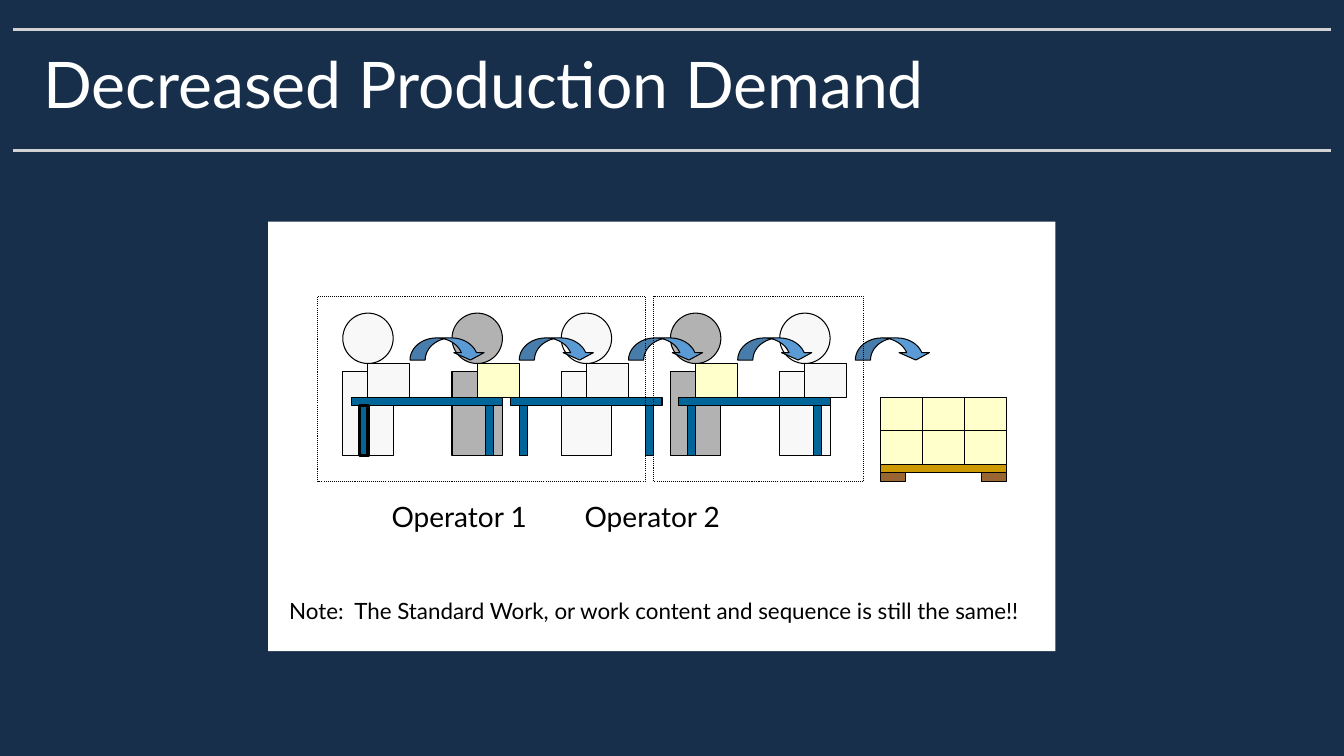
from lxml.etree import SubElement
from pptx import Presentation
from pptx.dml.color import RGBColor
from pptx.enum.dml import MSO_LINE
from pptx.enum.shapes import MSO_CONNECTOR, MSO_SHAPE as Shape
from pptx.enum.text import MSO_ANCHOR, MSO_AUTO_SIZE, PP_ALIGN
from pptx.oxml.ns import qn
from pptx.util import Inches, Pt

NAVY = RGBColor(0x17, 0x2F, 0x4A)
SILVER = RGBColor(0xD1, 0xD2, 0xD4)
WHITE = RGBColor(0xFF, 0xFF, 0xFF)
BLACK = RGBColor(0x00, 0x00, 0x00)
PALE = RGBColor(0xF8, 0xF8, 0xF8)
GRAY = RGBColor(0xB2, 0xB2, 0xB2)
CREAM = RGBColor(0xFF, 0xFF, 0xCC)
GOLD = RGBColor(0xCC, 0x99, 0x00)
BROWN = RGBColor(0x99, 0x66, 0x33)
TEAL = RGBColor(0x00, 0x66, 0x99)
BLUE = RGBColor(0x5B, 0x9B, 0xD5)

TITLE_ONLY = 5
STATION_PITCH = 13
BOX_WIDTH, BOX_HEIGHT = 5, 4
TABLE_ROW = 12


class Board:
    font_name = "Lato"
    cell = Inches(1) / 12
    grid_left, grid_top = Inches(3.15), Inches(2.94)

    def __init__(self, deck):
        self.width, self.height = deck.slide_width, deck.slide_height
        self.page = deck.slides.add_slide(deck.slide_layouts[TITLE_ONLY])
        background = self.page.background.fill
        background.solid()
        background.fore_color.rgb = NAVY

    def share(self, left, top, width, height):
        """Turn percentages of the slide into lengths."""
        return [round(part * side / 100) for part, side in
                zip((left, top, width, height), (self.width, self.height) * 2)]

    def grid(self, column, row, columns, rows):
        """Turn cells of the workstation grid into lengths."""
        return [round(self.grid_left + column * self.cell),
                round(self.grid_top + row * self.cell),
                round(columns * self.cell), round(rows * self.cell)]

    def shape(self, kind, area, fill=None, weight=0.75, dash=None):
        shape = self.page.shapes.add_shape(kind, *area)
        shape.shadow.inherit = False
        if fill is None:
            shape.fill.background()
        else:
            shape.fill.solid()
            shape.fill.fore_color.rgb = fill
        if weight:
            shape.line.color.rgb = BLACK
            shape.line.width = Pt(weight)
            shape.line.dash_style = dash
        else:
            shape.line.fill.background()
        return shape

    def block(self, column, row, columns, rows, fill=None, **style):
        return self.shape(Shape.RECTANGLE, self.grid(column, row, columns, rows), fill, **style)

    def rule(self, level):
        left, top, right, bottom = self.share(0.98, level, 99, level)
        line = self.page.shapes.add_connector(MSO_CONNECTOR.STRAIGHT, left, top, right, bottom)
        line.line.color.rgb = SILVER
        line.line.width = Pt(2)
        SubElement(line._element.spPr, qn("a:effectLst"))

    def span(self, para, text, size, color):
        span = para.add_run()
        span.text = text
        span.font.color.rgb = color
        for name, value in {"name": self.font_name, "size": Pt(size)}.items():
            setattr(span.font, name, value)

    def title(self, text):
        title = self.page.shapes.title
        title.left, title.top, title.width, title.height = self.share(2.48, 6.53, 94.95, 10.67)
        frame_format = {"word_wrap": True, "auto_size": MSO_AUTO_SIZE.NONE,
                        "vertical_anchor": MSO_ANCHOR.MIDDLE}
        for name, value in frame_format.items():
            setattr(title.text_frame, name, value)
        para = title.text_frame.paragraphs[0]
        para_format = {"alignment": PP_ALIGN.LEFT, "line_spacing": 0.82, "space_after": Pt(9)}
        for name, value in para_format.items():
            setattr(para, name, value)
        self.span(para, text, 45.9, WHITE)

    def label(self, area, spans, tabs=()):
        """Add one line of (text, size) spans, with tab stops in inches."""
        box = self.page.shapes.add_textbox(*area)
        box.text_frame.word_wrap = False
        box.text_frame.auto_size = MSO_AUTO_SIZE.SHAPE_TO_FIT_TEXT
        para = box.text_frame.paragraphs[0]
        if tabs:
            stops = SubElement(para._p.get_or_add_pPr(), qn("a:tabLst"))
            for tab in tabs:
                SubElement(stops, qn("a:tab"), pos=str(Inches(tab)), algn="l")
        for text, size in spans:
            self.span(para, text, size, BLACK)

    def person(self, column, body_color, box_color):
        self.block(column, 9, 6, 10, body_color)
        self.shape(Shape.OVAL, self.grid(column, 2, 6, 6), body_color)
        self.block(column + 3, TABLE_ROW - BOX_HEIGHT, BOX_WIDTH, BOX_HEIGHT, box_color)

    def pallet(self, column):
        self.block(column, 20, 3 * BOX_WIDTH, 1, GOLD)
        for level in (1, 2):
            for place in range(3):
                self.block(column + place * BOX_WIDTH, 20 - level * BOX_HEIGHT,
                           BOX_WIDTH, BOX_HEIGHT, CREAM)
        for offset in (0, 12):
            self.block(column + offset, 21, 3, 1, BROWN)

    def transfer(self, column):
        arrow = self.shape(Shape.CURVED_DOWN_ARROW, self.grid(column, 4.95, 9, 2.63), BLUE)
        for index, value in enumerate((0.686, 1.371, 0.333)):
            arrow.adjustments[index] = value

    def table(self, column, first_leg_weight=0.75):
        self.block(column, TABLE_ROW, 18, 1, TEAL)
        for offset, weight in ((1, first_leg_weight), (16, 0.75)):
            self.block(column + offset, TABLE_ROW + 1, 1, 6, TEAL, weight=weight)


def main():
    deck = Presentation()
    deck.slide_width, deck.slide_height = Inches(13.33), Inches(7.5)
    board = Board(deck)
    for level in (3.87, 19.87):
        board.rule(level)
    board.shape(Shape.RECTANGLE, board.share(19.95, 29.33, 58.58, 56.8), WHITE, weight=0)
    board.title("Decreased Production Demand")

    for station in range(5):
        colors = (GRAY, CREAM) if station % 2 else (PALE, PALE)
        board.person(3 + station * STATION_PITCH, *colors)
    board.pallet(67)
    for station in range(4):
        board.transfer(11 + station * STATION_PITCH)
    board.transfer(64)
    board.table(4, first_leg_weight=2.25)
    board.table(23)
    board.table(43)
    for column, columns in ((0, 39), (40, 25)):
        board.block(column, 0, columns, 22, dash=MSO_LINE.ROUND_DOT)

    board.label(board.share(27.75, 64.67, 26.85, 6.67),
                [(" ", 24), ("Operator 1\t\tOperator 2", 20)], tabs=(1.7, 2))
    board.label(board.share(20.78, 78.27, 56.85, 4.93),
                [("Note:  The Standard Work, or work content and sequence is still the same!!", 16)])
    deck.save("out.pptx")


if __name__ == "__main__":
    main()
